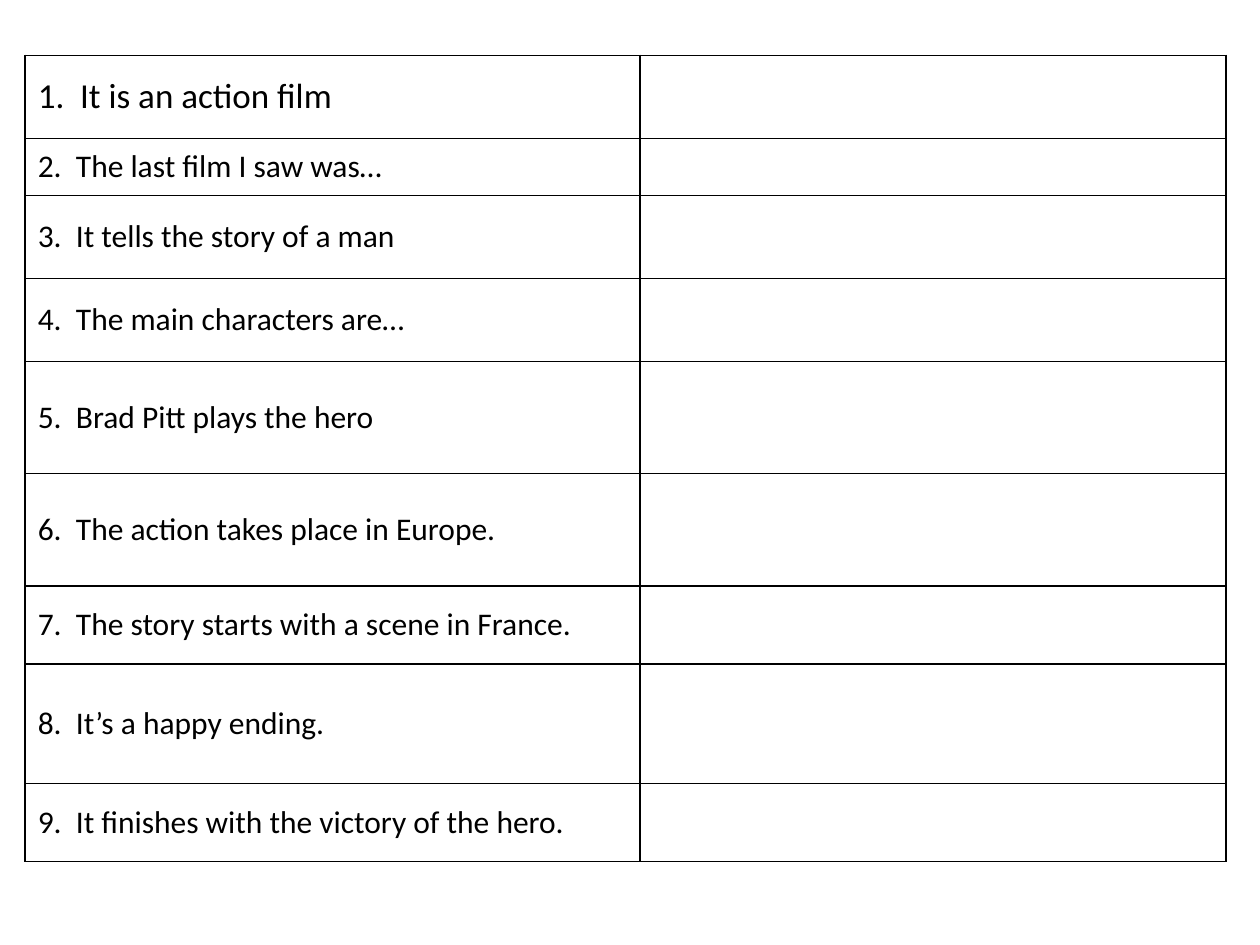
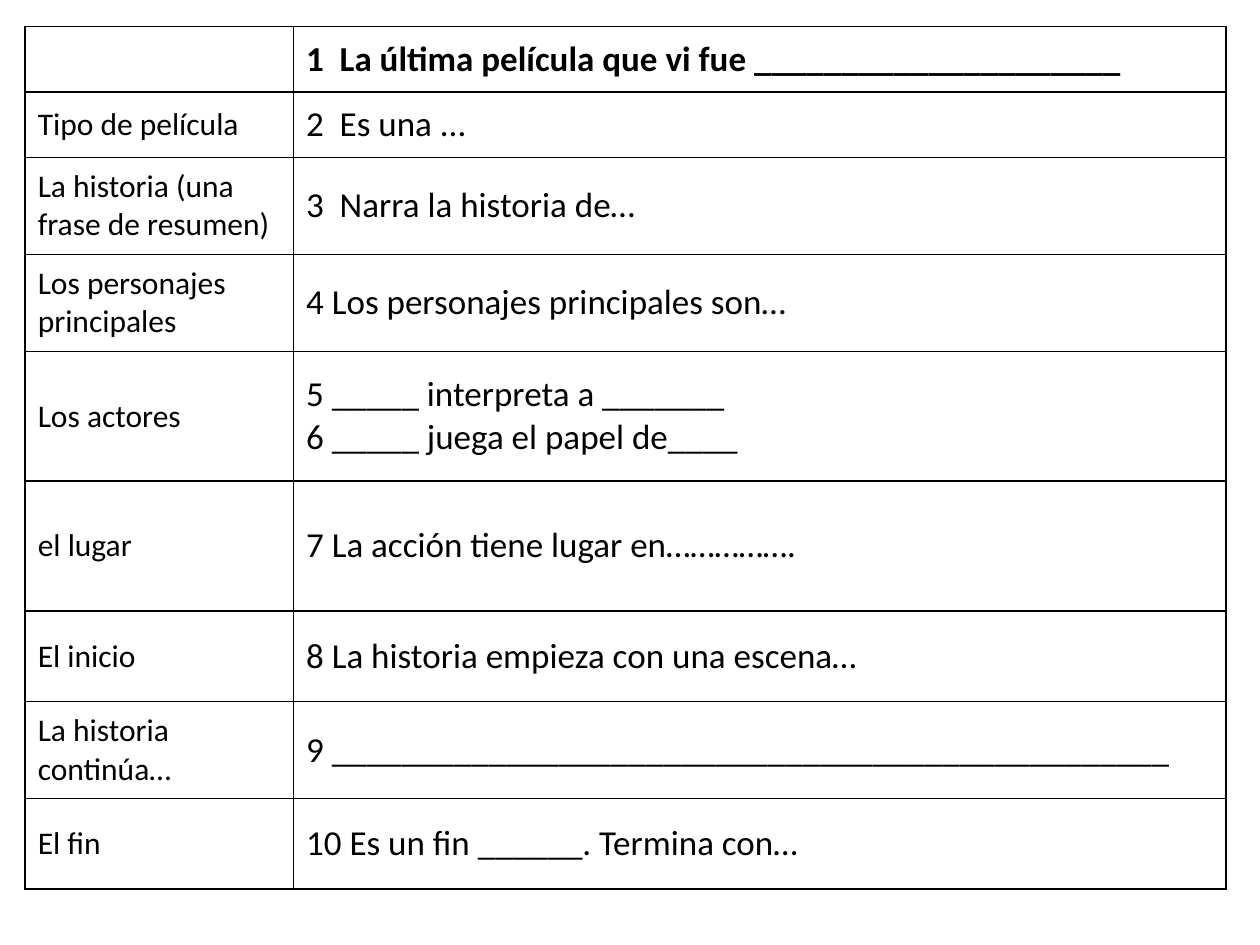
"""Build two bordered film-vocabulary worksheets, in English and Spanish."""
from lxml.etree import SubElement
from pptx import Presentation
from pptx.dml.color import RGBColor
from pptx.enum.text import MSO_ANCHOR
from pptx.oxml.ns import qn
from pptx.util import Inches, Pt

COLORS = {"text": "000000", "border": "000000"}
FONT = "Calibri"
LEFT = 0.2
BORDER_PT = 1

PHRASES = [
    "It is an action film",
    "The last film I saw was…",
    "It tells the story of a man",
    "The main characters are…",
    "Brad Pitt plays the hero",
    "The action takes place in Europe.",
    "The story starts with a scene in France.",
    "It’s a happy ending.",
    "It finishes with the victory of the hero.",
]

REVIEW = [
    ("", "1  La última película que vi fue " + "_" * 21),
    ("Tipo de película", "2  Es una ..."),
    ("La historia (una frase de resumen)", "3  Narra la historia de…"),
    ("Los personajes principales", "4 Los personajes principales son…"),
    ("Los actores", "5 _____ interpreta a _______\n6 _____ juega el papel de____"),
    ("el lugar", "7 La acción tiene lugar en……………."),
    ("El inicio", "8 La historia empieza con una escena…"),
    ("La historia continúa…", "9 " + "_" * 48),
    ("El fin", "10 Es un fin ______. Termina con…"),
]

WORKSHEETS = [
    {
        "top": 0.44,
        "cols": [4.88, 4.65],
        "heights": [0.66, 0.45, 0.66, 0.66, 0.89, 0.89, 0.62, 0.95, 0.62],
        "rows": [(f"{n}.  {phrase}", "") for n, phrase in enumerate(PHRASES, 1)],
        "sizes": [18, 18],
        "first": {"size": 20},
    },
    {
        "top": 0.21,
        "cols": [2.13, 7.4],
        "heights": [0.52, 0.52, 0.77, 0.77, 1.03, 1.03, 0.72, 0.77, 0.72],
        "rows": REVIEW,
        "sizes": [18, 20],
        "first": {"size": 20, "bold": True},
    },
]


def write(cell, text, size=18, bold=False):
    cell.vertical_anchor = MSO_ANCHOR.MIDDLE
    p = cell.text_frame.paragraphs[0]
    p.text = text
    for r in p.runs:
        r.font.name = FONT
        r.font.size = Pt(size)
        r.font.bold = bold
        r.font.color.rgb = RGBColor.from_string(COLORS["text"])


def outline(cell):
    tc_pr = cell._tc.get_or_add_tcPr()
    for side in "LRTB":
        ln = SubElement(tc_pr, qn(f"a:ln{side}"), w=str(Pt(BORDER_PT)))
        fill = SubElement(ln, qn("a:solidFill"))
        SubElement(fill, qn("a:srgbClr"), val=COLORS["border"])


def add_worksheet(s, top, cols, heights, rows, sizes, first):
    table = s.shapes.add_table(
        len(rows), len(cols), Inches(LEFT), Inches(top),
        Inches(sum(cols)), Inches(sum(heights)),
    ).table
    table.first_row = table.horz_banding = False
    for col, width in zip(table.columns, cols):
        col.width = Inches(width)
    for i, (row, height, texts) in enumerate(zip(table.rows, heights, rows)):
        row.height = Inches(height)
        for cell, text, size in zip(row.cells, texts, sizes):
            write(cell, text, **(first if i == 0 else {"size": size}))
            outline(cell)
            cell.fill.background()


def main():
    prs = Presentation()
    prs.slide_width, prs.slide_height = Inches(10), Inches(7.5)
    for worksheet in WORKSHEETS:
        s = prs.slides.add_slide(prs.slide_layouts[6])
        add_worksheet(s, **worksheet)
    prs.save("out.pptx")


if __name__ == "__main__":
    main()
